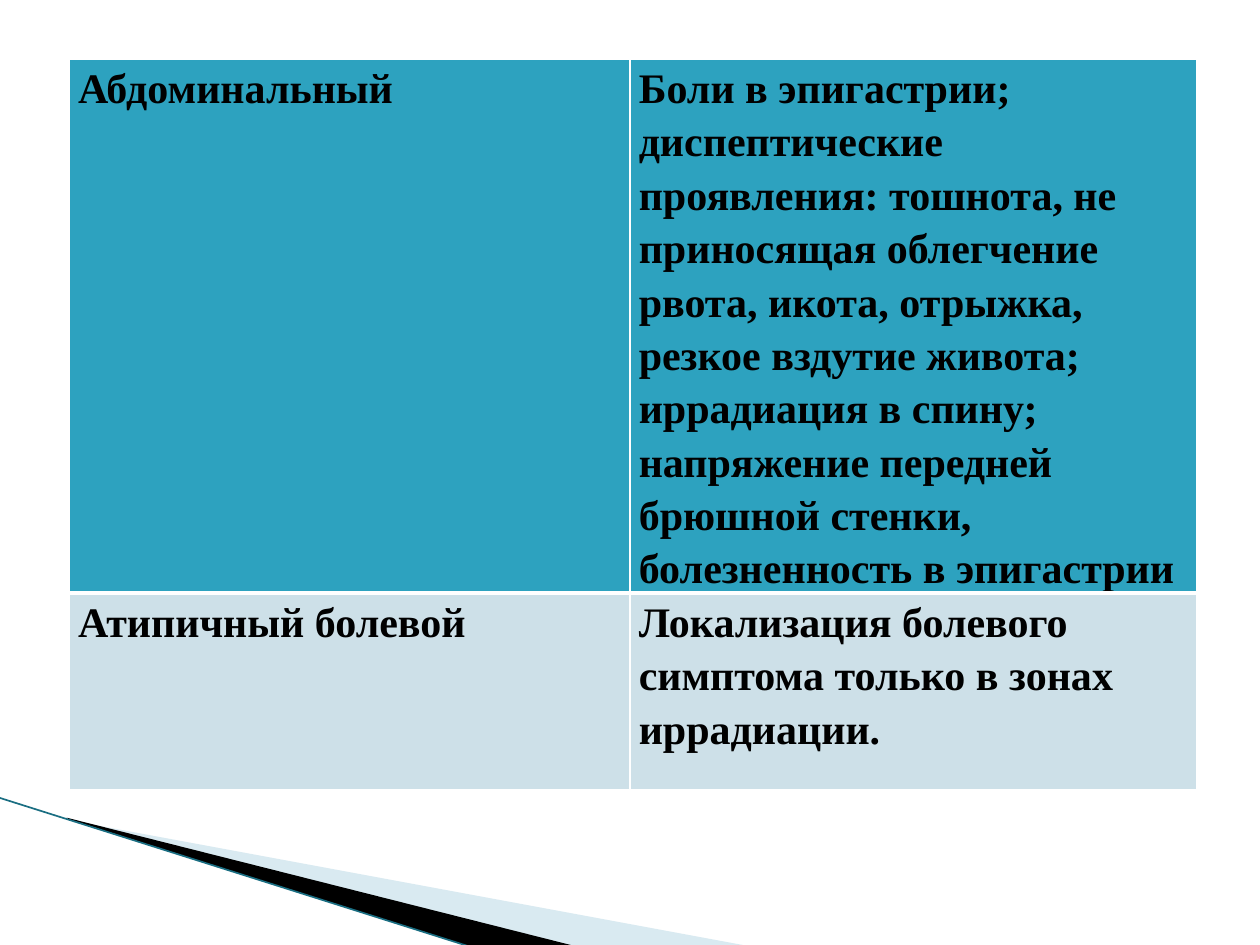
import pptx
import pptx.util
import pptx.dml.color
import pptx.enum.shapes
import pptx.oxml
import pptx.oxml.ns
from lxml import etree

ROWS = [
    ("Абдоминальный",
     "Боли в эпигастрии; диспептические проявления: тошнота, не приносящая облегчение "
     "рвота, икота, отрыжка, резкое вздутие живота; иррадиация в спину; напряжение "
     "передней брюшной стенки, болезненность в эпигастрии"),
    ("Атипичный болевой",
     "Локализация болевого симптома только в зонах иррадиации."),
]
ROW_FILLS = ["2DA2BF", "CDE0E8"]
ROW_HEIGHTS = [4.22, 1.56]
BOTTOM_BORDERS = [3, 1]
COLUMN_WIDTHS = [4.45, 4.5]
TABLE_LEFT, TABLE_TOP = 0.55, 0.47

WEDGES = [
    ((0.78, 5.47, 4.16, 1.58),
     [(0.55, 6.51), (5.95, 7.51), (4.56, 7.51), (0.55, 6.5)], "A0CBDC", 40),
    ((-0.06, 6.33, 4.16, 0.92),
     [(0.53, 6.49), (4.57, 7.51), (3.75, 7.52), (0.54, 6.5)], "000000", 100),
]
EDGE = ((-0.01, 6.33), (3.75, 7.52), "1A6E82", 0.95)


def color(value):
    return pptx.dml.color.RGBColor.from_string(value)


def inches(*values):
    return [pptx.util.Inches(value) for value in values]


def set_frame(shape, points, frame):
    left, top, width, height = inches(*frame)
    shape.left, shape.top, shape.width, shape.height = left, top, width, height
    outline = shape._element.find(".//" + pptx.oxml.ns.qn("a:path"))
    outline.set("w", str(width))
    outline.set("h", str(height))
    for node, point in zip(outline.iter(pptx.oxml.ns.qn("a:pt")), points):
        x, y = inches(*point)
        node.set("x", str(x - left))
        node.set("y", str(y - top))


def add_wedge(slide, frame, points, fill, opacity):
    builder = slide.shapes.build_freeform(*inches(*points[0]), scale=1.0)
    builder.add_line_segments([inches(*point) for point in points[1:]], close=True)
    shape = builder.convert_to_shape()
    set_frame(shape, points, frame)
    shape.shadow.inherit = False
    shape.fill.solid()
    shape.fill.fore_color.rgb = color(fill)
    shape.line.fill.background()
    if opacity < 100:
        fill_color = shape.fill._xPr.find(".//" + pptx.oxml.ns.qn("a:srgbClr"))
        etree.SubElement(fill_color, pptx.oxml.ns.qn("a:alpha"), val=str(opacity * 1000))


def add_edge(slide, start, end, stroke, width):
    line = slide.shapes.add_connector(
        pptx.enum.shapes.MSO_CONNECTOR.STRAIGHT, *inches(*start, *end))
    line.line.color.rgb = color(stroke)
    line.line.width = pptx.util.Pt(width)
    etree.SubElement(line._element.spPr, pptx.oxml.ns.qn("a:effectLst"))


def set_borders(cell, widths):
    properties = cell._tc.get_or_add_tcPr()
    for index, (side, width) in enumerate(zip("LRTB", widths)):
        border = pptx.oxml.parse_xml(
            f'<a:ln{side} {pptx.oxml.ns.nsdecls("a")} w="{pptx.util.Pt(width)}">'
            f'<a:solidFill><a:srgbClr val="FFFFFF"/></a:solidFill></a:ln{side}>')
        properties.insert(index, border)


def fill_cell(cell, text, fill, widths):
    cell.fill.solid()
    cell.fill.fore_color.rgb = color(fill)
    cell.margin_left, cell.margin_right, cell.margin_top, cell.margin_bottom = inches(
        0.07, 0.07, 0, 0)
    set_borders(cell, widths)
    cell.text = text
    paragraph = cell.text_frame.paragraphs[0]
    paragraph.line_spacing = 1.15
    paragraph.space_after = pptx.util.Pt(12)
    paragraph.font.name = "Times New Roman"
    paragraph.font.size = pptx.util.Pt(24)
    paragraph.font.bold = True
    paragraph.font.color.rgb = color("000000")


def add_symptom_table(slide):
    table = slide.shapes.add_table(
        len(ROWS), len(COLUMN_WIDTHS),
        *inches(TABLE_LEFT, TABLE_TOP, sum(COLUMN_WIDTHS), sum(ROW_HEIGHTS))).table
    for column, width in zip(table.columns, COLUMN_WIDTHS):
        column.width = pptx.util.Inches(width)
    for index, texts in enumerate(ROWS):
        table.rows[index].height = pptx.util.Inches(ROW_HEIGHTS[index])
        top = BOTTOM_BORDERS[index - 1] if index else 1
        for column, text in enumerate(texts):
            fill_cell(table.cell(index, column), text, ROW_FILLS[index],
                      (1, 1, top, BOTTOM_BORDERS[index]))


def main():
    presentation = pptx.Presentation()
    presentation.slide_width, presentation.slide_height = inches(10, 7.5)
    slide = presentation.slides.add_slide(presentation.slide_layouts[6])
    for wedge in WEDGES:
        add_wedge(slide, *wedge)
    add_edge(slide, *EDGE)
    add_symptom_table(slide)
    presentation.save("out.pptx")


if __name__ == "__main__":
    main()
